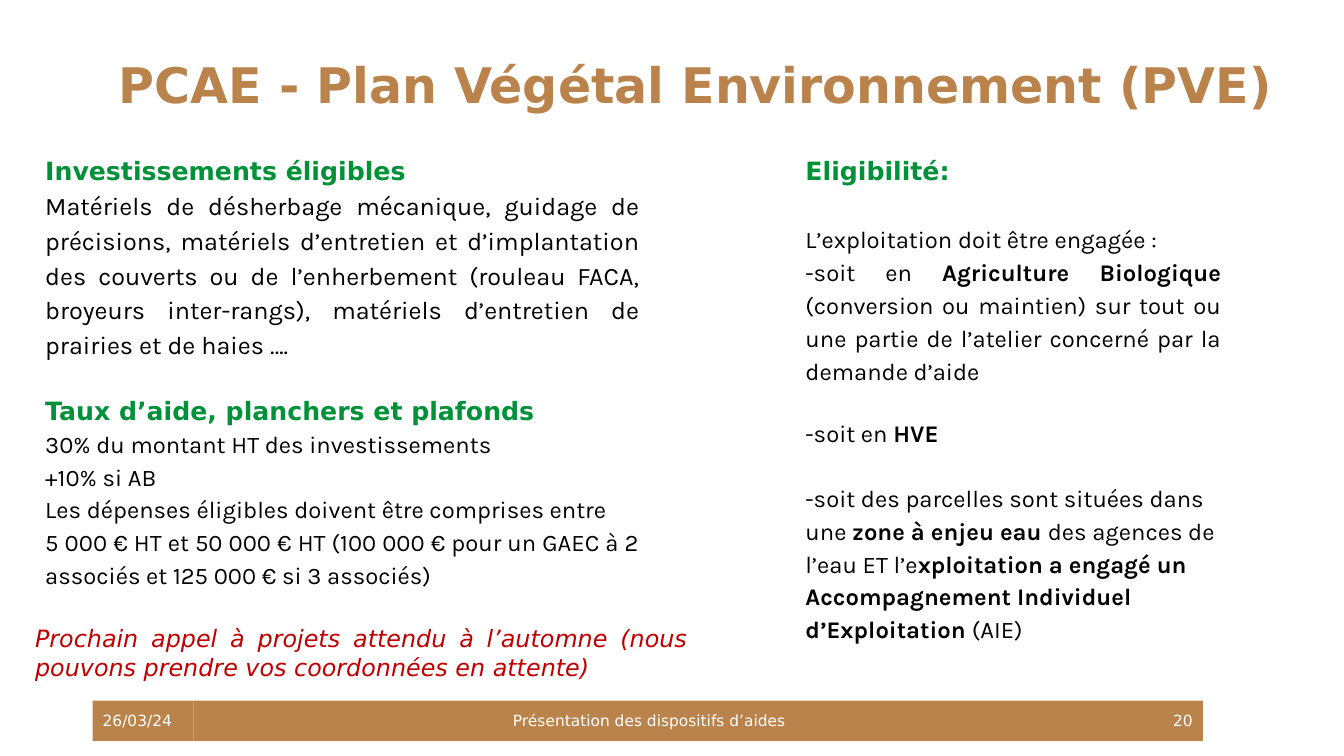
from pptx import Presentation
from pptx.dml.color import RGBColor
from pptx.enum.shapes import MSO_SHAPE
from pptx.enum.text import MSO_ANCHOR, MSO_AUTO_SIZE, PP_ALIGN
from pptx.util import Emu, Pt

LEFT, CENTER, RIGHT, JUSTIFY = PP_ALIGN.LEFT, PP_ALIGN.CENTER, PP_ALIGN.RIGHT, PP_ALIGN.JUSTIFY
TOP, MIDDLE, BOTTOM = MSO_ANCHOR.TOP, MSO_ANCHOR.MIDDLE, MSO_ANCHOR.BOTTOM
RECTANGLE = MSO_SHAPE.RECTANGLE
NO_AUTOFIT = MSO_AUTO_SIZE.NONE
PX = 9144

BROWN = RGBColor.from_string("BA834B")
GREEN = RGBColor.from_string("009139")
BLACK = RGBColor.from_string("000000")
WHITE = RGBColor.from_string("FFFFFF")
RED = RGBColor.from_string("C00000")
THEME = {
    "title": {"name": "DejaVu Sans", "size": Pt(35), "color": BROWN, "bold": True},
    "heading": {"name": "DejaVu Sans", "size": Pt(18), "color": GREEN, "bold": True},
    "lead": {"name": "Karla", "size": Pt(18), "color": BLACK, "bold": False},
    "body": {"name": "Karla", "size": Pt(17), "color": BLACK, "bold": False},
    "strong": {"name": "Karla", "size": Pt(17), "color": BLACK, "bold": True},
    "notice": {"name": "DejaVu Sans", "size": Pt(17), "color": RED, "italic": True},
    "footer": {"name": "DejaVu Sans", "size": Pt(11), "color": WHITE, "bold": False},
}


def place(box, left, top, width, height):
    bounds = {"left": left, "top": top, "width": width, "height": height}
    for key, value in bounds.items():
        setattr(box, key, Emu(value * PX))


def write(box, paragraphs, anchor=TOP, inset=5, spacing=1.15):
    frame = box.text_frame
    frame_format = {
        "word_wrap": True, "auto_size": NO_AUTOFIT, "vertical_anchor": anchor,
        "margin_left": Emu(10 * PX), "margin_right": Emu(10 * PX),
        "margin_top": Emu(inset * PX), "margin_bottom": Emu(inset * PX),
    }
    for key, value in frame_format.items():
        setattr(frame, key, value)
    for index, (alignment, gap, spans) in enumerate(paragraphs):
        para = frame.add_paragraph() if index else frame.paragraphs[0]
        para.alignment = alignment
        para.line_spacing = spacing
        if gap:
            para.space_before = Pt(gap)
        for style, text in spans:
            span = para.add_run()
            span.text = text
            for key, value in THEME[style].items():
                if key == "color":
                    span.font.color.rgb = value
                else:
                    setattr(span.font, key, value)


deck = Presentation()
deck.slide_width = Emu(1333 * PX)
deck.slide_height = Emu(750 * PX)
page = deck.slides.add_slide(deck.slide_layouts[5])

title = page.shapes.title
place(title, 108, -194, 1225, 312)
write(title, [(LEFT, 0, [("title", "PCAE - Plan Végétal Environnement (PVE)")])], BOTTOM, spacing=0.9)

footer_cells = [
    (100, LEFT, "26/03/24"),
    (904, CENTER, "Présentation des dispositifs d’aides"),
    (97, RIGHT, "20"),
]
cell_left = 92
for cell_width, alignment, text in footer_cells:
    cell = page.shapes.add_shape(RECTANGLE, 0, 0, 0, 0)
    place(cell, cell_left, 695, cell_width, 40)
    cell.shadow.inherit = False
    cell.fill.solid()
    cell.fill.fore_color.rgb = BROWN
    cell.line.fill.background()
    write(cell, [(alignment, 0, [("footer", text)])], MIDDLE, spacing=1.0)
    cell_left += cell_width

investments = [
    (LEFT, 0, [("heading", "Investissements éligibles")]),
    (JUSTIFY, 0, [("lead", "Matériels de désherbage mécanique, guidage de précisions, matériels "
                           "d’entretien et d’implantation des couverts ou de l’enherbement "
                           "(rouleau FACA, broyeurs inter-rangs), matériels d’entretien de "
                           "prairies et de haies ….")]),
    (LEFT, 22, [("heading", "Taux d’aide, planchers et plafonds")]),
    (LEFT, 0, [("body", "30% du montant HT des investissements")]),
    (LEFT, 0, [("body", "+10% si AB")]),
    (JUSTIFY, 0, [("body", "Les dépenses éligibles doivent être comprises entre")]),
    (JUSTIFY, 0, [("body", "5 000 € HT et 50 000 € HT (100 000 € pour un GAEC à 2 associés "
                           "et 125 000 € si 3 associés)")]),
]
eligibility = [
    (LEFT, 0, [("heading", "Eligibilité:")]),
    (JUSTIFY, 25, [("body", "L’exploitation doit être engagée :")]),
    (JUSTIFY, 0, [("body", "-soit en "), ("strong", "Agriculture Biologique"),
                  ("body", " (conversion ou maintien) sur tout ou une partie de l’atelier "
                           "concerné par la demande d’aide")]),
    (LEFT, 21, [("body", "-soit en "), ("strong", "HVE")]),
    (LEFT, 23, [("body", "-soit des parcelles sont situées dans une "),
                ("strong", "zone à enjeu eau "),
                ("body", "des agences de l’eau ET l’e"),
                ("strong", "xploitation a engagé un Accompagnement Individuel d’Exploitation "),
                ("body", "(AIE)")]),
]
notice = [
    (JUSTIFY, 0, [("notice", "Prochain appel à projets attendu à l’automne (nous pouvons prendre "
                             "vos coordonnées en attente)")]),
]
text_boxes = [
    ((35, 145, 609, 225), investments, 5, 1.15),
    ((789, 140, 432, 510), eligibility, 10, 1.15),
    ((25, 609, 667, 106), notice, 10, 1.0),
]
for bounds, paragraphs, inset, spacing in text_boxes:
    box = page.shapes.add_textbox(0, 0, 0, 0)
    place(box, *bounds)
    write(box, paragraphs, inset=inset, spacing=spacing)

deck.save("out.pptx")
